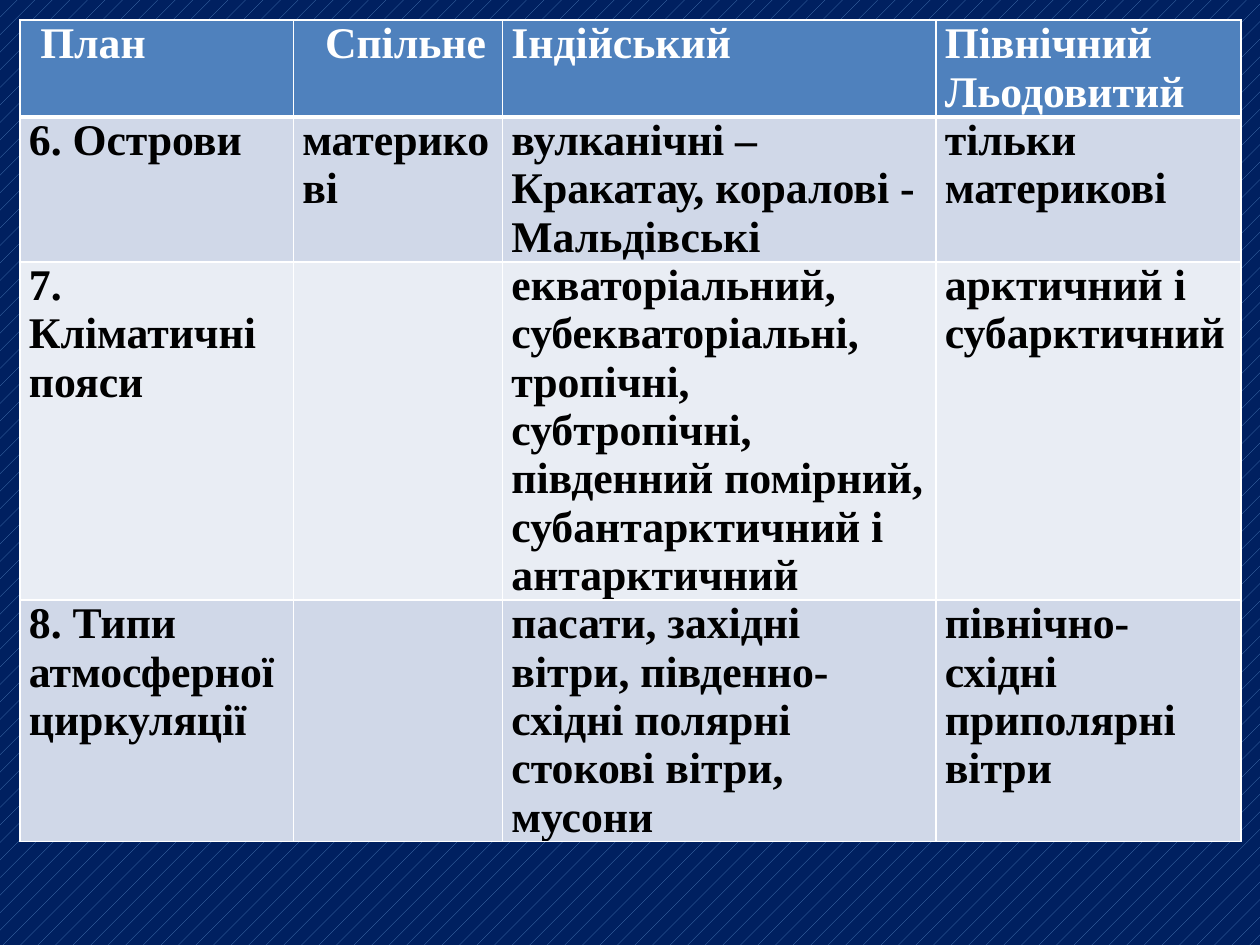
import pptx
import pptx.util
import pptx.dml.color
import pptx.enum.dml
import pptx.oxml
import pptx.oxml.ns
import lxml.etree

Inches = pptx.util.Inches
Pt = pptx.util.Pt

FONT = "Times New Roman"
SPACE = 0.09
HEAD = ["План", "Спільне", "Індійський", "Північний Льодовитий"]
INDENTS = [SPACE, 2 * SPACE, 0, 0]
BODY = [
    ["6. Острови", "материкові",
     "вулканічні – Кракатау, коралові - Мальдівські", "тільки материкові"],
    ["7. Кліматичні пояси", "",
     "екваторіальний, субекваторіальні, тропічні, субтропічні, "
     "південний помірний, субантарктичний і антарктичний",
     "арктичний і субарктичний"],
    ["8. Типи атмосферної циркуляції", "",
     "пасати, західні вітри, південно-східні полярні стокові вітри, мусони",
     "північно-східні приполярні вітри"],
]
WIDTHS = [2.17, 1.66, 3.44, 2.42]
BANDS = ["D0D8E8", "E9EDF4"]


def color(value):
    return pptx.dml.color.RGBColor.from_string(value)


def border(cell, side, width):
    props = cell._tc.get_or_add_tcPr()
    line = lxml.etree.Element(pptx.oxml.ns.qn("a:ln" + side), w=str(Pt(width)))
    fill = lxml.etree.SubElement(line, pptx.oxml.ns.qn("a:solidFill"))
    lxml.etree.SubElement(fill, pptx.oxml.ns.qn("a:srgbClr"), val="FFFFFF")
    props.append(line)


def fill_cell(cell, text, ink, back, widths, indent=0):
    cell.margin_left = Inches(0.07 + indent)
    cell.margin_right = Inches(0.07)
    cell.margin_top = cell.margin_bottom = 0
    for side, width in zip("LRTB", widths):
        border(cell, side, width)
    cell.fill.solid()
    cell.fill.fore_color.rgb = color(back)
    if text:
        run = cell.text_frame.paragraphs[0].add_run()
        run.text = text
        run.font.name = FONT
        run.font.size = Pt(25)
        run.font.bold = True
        run.font.color.rgb = color(ink)


def draw_table(slide, left, top, width, height):
    count = len(BODY) + 1
    frame = slide.shapes.add_table(
        count, len(HEAD), Inches(left), Inches(top),
        Inches(width), Inches(0.41 * count))
    frame.height = Inches(height)
    table = frame.table
    for col, share in zip(table.columns, WIDTHS):
        col.width = Inches(width * share / sum(WIDTHS))
    for col, text in enumerate(HEAD):
        fill_cell(table.cell(0, col), text, "FFFFFF", "4F81BD",
                  (1, 1, 1, 3), INDENTS[col])
    for row, texts in enumerate(BODY):
        edge = 3 if row == 0 else 1
        for col, text in enumerate(texts):
            fill_cell(table.cell(row + 1, col), text, "000000",
                      BANDS[row % 2], (1, 1, edge, 1))


def paint_back(slide):
    fill = slide.background.fill
    fill.patterned()
    fill.pattern = pptx.enum.dml.MSO_PATTERN.PERCENT_5
    fill.fore_color.rgb = color("4F81BD")
    fill.back_color.rgb = color("002060")


def main():
    deck = pptx.Presentation()
    deck.slide_width = Inches(10)
    deck.slide_height = Inches(7.5)
    slide = deck.slides.add_slide(deck.slide_layouts[6])
    paint_back(slide)
    draw_table(slide, 0.16, 0.16, 9.69, 7.08)
    deck.save("out.pptx")


if __name__ == "__main__":
    main()
